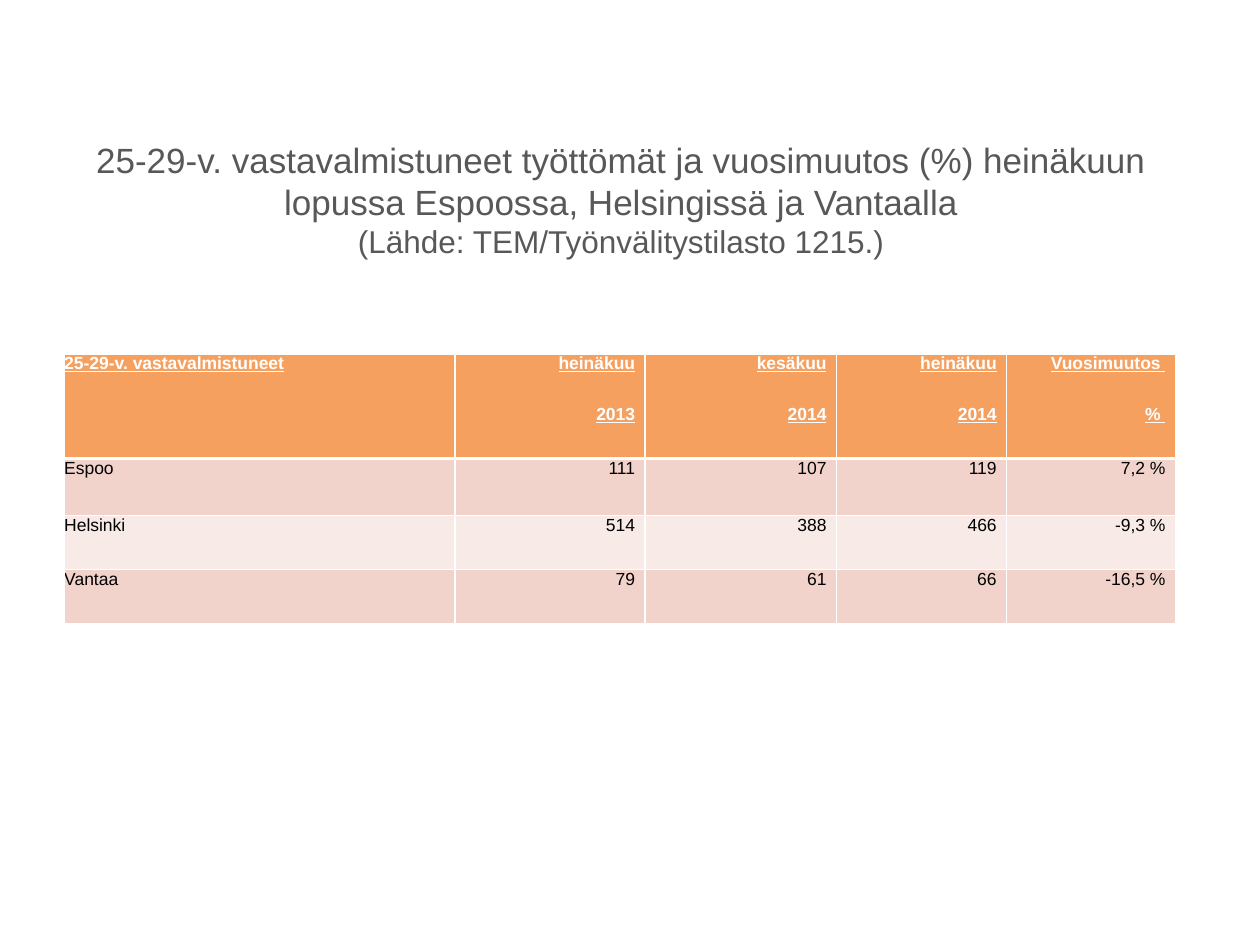
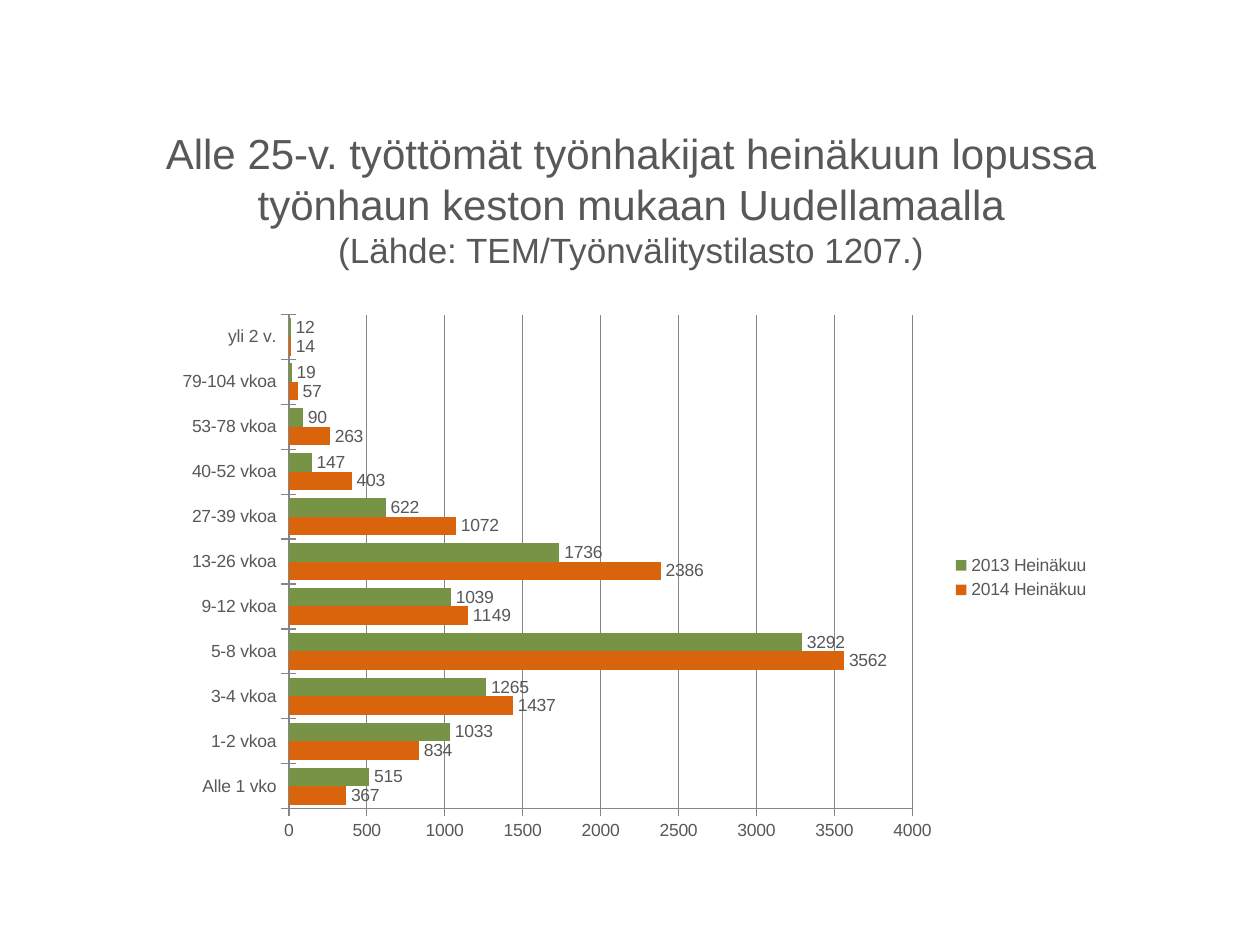
from pptx import Presentation
from pptx.chart.data import CategoryChartData
from pptx.dml.color import RGBColor
from pptx.enum.chart import XL_CHART_TYPE as ChartType, XL_LABEL_POSITION as LabelPos
from pptx.enum.chart import XL_LEGEND_POSITION as LegendPos, XL_TICK_MARK as Tick
from pptx.enum.text import MSO_ANCHOR as Anchor, PP_ALIGN as Align
from pptx.oxml.ns import qn
from pptx.util import Inches, Pt
from lxml.etree import SubElement

FONT = "Arial"
GREY = RGBColor(0x58, 0x58, 0x5A)
AXIS = RGBColor(0x86, 0x86, 0x86)
WHITE = RGBColor(0xFF, 0xFF, 0xFF)
BLACK = RGBColor(0x00, 0x00, 0x00)
HEADER = RGBColor(0xF6, 0xA0, 0x5F)
BAND_DARK = RGBColor(0xF1, 0xD3, 0xCC)
BAND_LIGHT = RGBColor(0xF8, 0xEA, 0xE7)
ORANGE = RGBColor(0xD9, 0x64, 0x0C)
GREEN = RGBColor(0x77, 0x93, 0x46)

GRID_COLS, GRID_ROWS = 100, 75
UNIT = Inches(0.1)

TABLE_COLS = (31, 15.1, 15.2, 13.5, 13.4)
TABLE_ROWS = (4, 4.3, 4.5, 4.3, 4.3)
HEADER_ROWS = 2
UNEMPLOYED = (
    ("25-29-v. vastavalmistuneet", "heinäkuu", "kesäkuu", "heinäkuu", "Vuosimuutos "),
    ("", "2013", "2014", "2014", "% "),
    ("Espoo", "111", "107", "119", "7,2 %"),
    ("Helsinki", "514", "388", "466", "-9,3 %"),
    ("Vantaa", "79", "61", "66", "-16,5 %"),
)

DURATIONS = ("Alle 1 vko", "1-2 vkoa", "3-4 vkoa", "5-8 vkoa", "9-12 vkoa", "13-26 vkoa",
             "27-39 vkoa", "40-52 vkoa", "53-78 vkoa", "79-104 vkoa", "yli 2 v.")
SEEKERS = (
    ("2014 Heinäkuu", ORANGE, (367, 834, 1437, 3562, 1149, 2386, 1072, 403, 263, 57, 14)),
    ("2013 Heinäkuu", GREEN, (515, 1033, 1265, 3292, 1039, 1736, 622, 147, 90, 19, 12)),
)


def grid(*units):
    return [int(u * UNIT) for u in units]


def style(font, size, color):
    font.name, font.size = FONT, Pt(size)
    font.color.rgb = color


def add_title(slide, box, heading, source, size, source_size):
    tf = slide.shapes.add_textbox(*grid(*box)).text_frame
    tf.word_wrap = True
    tf.vertical_anchor = Anchor.MIDDLE
    p = tf.paragraphs[0]
    p.text = f"{heading}\v{source}"
    p.alignment = Align.CENTER
    for r, run_size in zip(p.runs, (size, source_size)):
        style(r.font, run_size, GREY)


def add_borders(cell, widths):
    tc_pr = cell._tc.get_or_add_tcPr()
    for side, width in widths.items():
        ln = SubElement(tc_pr, qn(f"a:ln{side}"), w=str(Pt(width)))
        if width:
            fill = SubElement(ln, qn("a:solidFill"))
            SubElement(fill, qn("a:srgbClr"), val=str(WHITE))
        else:
            SubElement(ln, qn("a:noFill"))


def style_cell(cell, row, col, text):
    is_header = row < HEADER_ROWS
    add_borders(cell, {
        "L": 1,
        "R": 1,
        "T": {1: 0, HEADER_ROWS: 1.5}.get(row, 1),
        "B": {0: 0, HEADER_ROWS - 1: 1.5}.get(row, 1),
    })
    cell.fill.solid()
    band = BAND_LIGHT if row % 2 else BAND_DARK
    cell.fill.fore_color.rgb = HEADER if is_header else band
    cell.margin_left = cell.margin_top = cell.margin_bottom = 0
    cell.margin_right = Inches(0.08) if col else 0
    p = cell.text_frame.paragraphs[0]
    p.text = text
    p.alignment = Align.RIGHT if col else Align.LEFT
    style(p.font, 10, WHITE if is_header else BLACK)
    for r in p.runs:
        style(r.font, 10, WHITE if is_header else BLACK)
        r.font.bold = r.font.underline = is_header


def add_city_table(slide, left, top):
    box = grid(left, top, sum(TABLE_COLS), sum(TABLE_ROWS))
    table = slide.shapes.add_table(len(TABLE_ROWS), len(TABLE_COLS), *box).table
    for column, width in zip(table.columns, grid(*TABLE_COLS)):
        column.width = width
    for row, height in zip(table.rows, grid(*TABLE_ROWS)):
        row.height = height
    for i, texts in enumerate(UNEMPLOYED):
        for j, text in enumerate(texts):
            style_cell(table.cell(i, j), i, j, text)
    table.cell(0, 0).merge(table.cell(HEADER_ROWS - 1, 0))


def add_duration_chart(slide, box):
    data = CategoryChartData()
    data.categories = DURATIONS
    for name, _, values in SEEKERS:
        data.add_series(name, values)
    chart = slide.shapes.add_chart(ChartType.BAR_CLUSTERED, *grid(*box), data).chart
    style(chart.font, 10, GREY)
    chart.has_title = False
    chart.has_legend = True
    chart.legend.position = LegendPos.RIGHT
    chart.legend.include_in_layout = False

    plot = chart.plots[0]
    plot.gap_width = 42
    plot.vary_by_categories = False
    plot.has_data_labels = True
    plot.data_labels.show_value = True
    plot.data_labels.position = LabelPos.OUTSIDE_END
    for series, (_, color, _) in zip(plot.series, SEEKERS):
        series.format.fill.solid()
        series.format.fill.fore_color.rgb = color

    values = chart.value_axis
    values.minimum_scale, values.maximum_scale, values.major_unit = 0, 4000, 500
    values.has_major_gridlines = True
    for axis in (chart.category_axis, values):
        axis.major_tick_mark = Tick.CROSS
    for part in (chart.category_axis, values, values.major_gridlines):
        part.format.line.color.rgb = AXIS
        part.format.line.width = Pt(0.75)


def build_city_slide(slide):
    add_title(slide, (4.3, 12.3, 90, 7),
              "25-29-v. vastavalmistuneet työttömät ja vuosimuutos (%) heinäkuun lopussa "
              "Espoossa, Helsingissä ja Vantaalla",
              "(Lähde: TEM/Työnvälitystilasto 1215.)", 20, 18)
    add_city_table(slide, 5.1, 28.1)


def build_duration_slide(slide):
    add_title(slide, (5.1, 12.3, 90, 7),
              "Alle 25-v. työttömät työnhakijat heinäkuun lopussa työnhaun keston mukaan "
              "Uudellamaalla",
              "(Lähde: TEM/Työnvälitystilasto 1207.)", 24, 20)
    add_duration_chart(slide, (13, 24.1, 74.5, 43.5))


def main():
    prs = Presentation()
    prs.slide_width, prs.slide_height = grid(GRID_COLS, GRID_ROWS)
    for build in (build_city_slide, build_duration_slide):
        build(prs.slides.add_slide(prs.slide_layouts[6]))
    prs.save("out.pptx")


if __name__ == "__main__":
    main()
